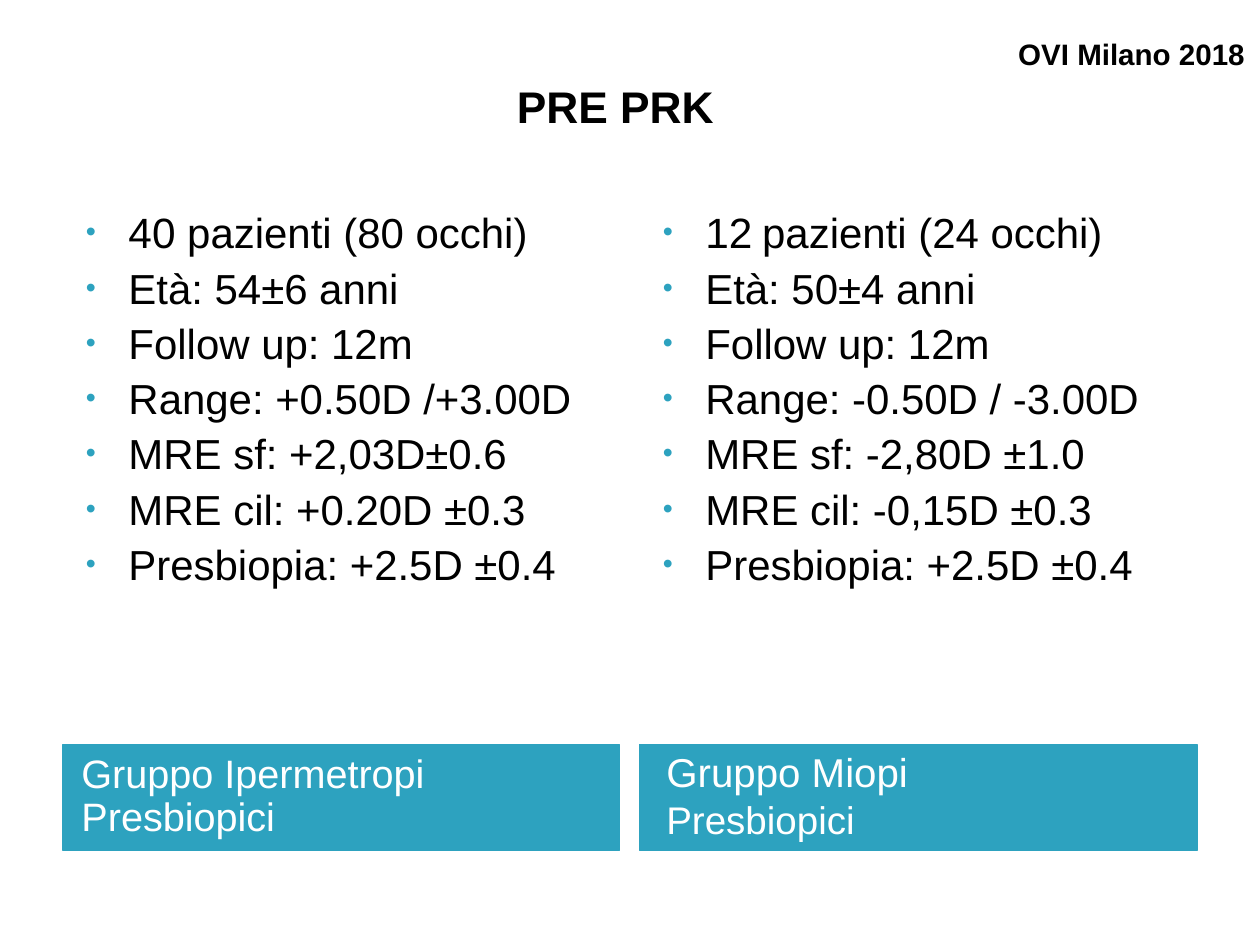
import pptx
import pptx.dml.color
import pptx.enum.shapes
import pptx.enum.text
import pptx.oxml
import pptx.oxml.ns
import pptx.util

PX = 9144  # EMU in one px, 100 px to the inch
FONT = "Arial"
COLORS = {"teal": "2DA2BF", "white": "FFFFFF", "black": "000000"}
ANCHOR = pptx.enum.text.MSO_ANCHOR
BULLET_SIZE = 34.1
COUNT_SIZE = 34.4

HYPEROPES = [
    [("40", COUNT_SIZE), (" pazienti (80 occhi)", BULLET_SIZE)],
    [("Età: 54±6 anni", BULLET_SIZE)],
    [("Follow up: 12m", BULLET_SIZE)],
    [("Range: +0.50D /+3.00D", BULLET_SIZE)],
    [("MRE sf: +2,03D±0.6", BULLET_SIZE)],
    [("MRE cil: +0.20D ±0.3", BULLET_SIZE)],
    [("Presbiopia: +2.5D ±0.4", BULLET_SIZE)],
]
MYOPES = [
    [("12", COUNT_SIZE), (" ", 28.4), ("pazienti (24 occhi)", BULLET_SIZE)],
    [("Età: 50±4 anni", BULLET_SIZE)],
    [("Follow up: 12m", BULLET_SIZE)],
    [("Range: -0.50D / -3.00D", BULLET_SIZE)],
    [("MRE sf: -2,80D ±1.0", BULLET_SIZE)],
    [("MRE cil: -0,15D ±0.3", BULLET_SIZE)],
    [("Presbiopia: +2.5D ±0.4", BULLET_SIZE)],
]


def px(*lengths):
    return [length * PX for length in lengths]


def color(name):
    return pptx.dml.color.RGBColor.from_string(COLORS[name])


def set_frame(frame, insets, anchor, wrap=True):
    (frame.margin_left, frame.margin_top,
     frame.margin_right, frame.margin_bottom) = px(*insets)
    frame.vertical_anchor = anchor
    frame.word_wrap = wrap


def write_lines(frame, lines, ink, bold=False):
    """Write one paragraph per line; a line is a list of (text, size)."""
    for index, line in enumerate(lines):
        para = frame.add_paragraph() if index else frame.paragraphs[0]
        para.alignment = pptx.enum.text.PP_ALIGN.LEFT
        for text, size in line:
            span = para.add_run()
            span.text = text
            span.font.name = FONT
            span.font.size = pptx.util.Pt(size)
            span.font.bold = bold
            span.font.color.rgb = color(ink)


def add_bullet(para):
    props = para._p.get_or_add_pPr()
    props.set("marL", str(60 * PX))
    props.set("indent", str(-48 * PX))
    space = pptx.oxml.ns.nsdecls("a")
    for xml in (
        f'<a:buClr {space}><a:srgbClr val="{COLORS["teal"]}"/></a:buClr>',
        f'<a:buSzPct {space} val="68000"/>',
        f'<a:buFont {space} typeface="{FONT}"/>',
        f'<a:buChar {space} char="•"/>',
    ):
        props.append(pptx.oxml.parse_xml(xml))


def heading(page, box, text, size):
    frame = page.shapes.add_textbox(*px(*box)).text_frame
    set_frame(frame, (0, 0, 0, 0), ANCHOR.MIDDLE, wrap=False)
    write_lines(frame, [[(text, size)]], "black", bold=True)
    frame.paragraphs[0].alignment = pptx.enum.text.PP_ALIGN.CENTER


def bullet_list(page, box, lines):
    frame = page.shapes.add_textbox(*px(*box)).text_frame
    set_frame(frame, (14, 8, 14, 8), ANCHOR.TOP)
    write_lines(frame, lines, "black")
    for para in frame.paragraphs:
        para.space_before = pptx.util.Pt(4)
        add_bullet(para)


def group_label(page, box, lines, insets, gap):
    label = page.shapes.add_shape(
        pptx.enum.shapes.MSO_SHAPE.RECTANGLE, *px(*box))
    label.shadow.inherit = False
    label.fill.solid()
    label.fill.fore_color.rgb = color("teal")
    label.line.color.rgb = color("teal")
    label.line.width = pptx.util.Pt(1.08)
    set_frame(label.text_frame, insets, ANCHOR.MIDDLE)
    write_lines(label.text_frame, lines, "white")
    for para in label.text_frame.paragraphs:
        para.line_spacing = 0.9
        para.space_before = pptx.util.Pt(gap)


def group_column(page, box, bullets, label, insets, gap):
    """Bullets from the top of the box, coloured label along its bottom."""
    left, top, width, height = box
    label_height = 119
    bullet_list(page, (left, top, width, 452), bullets)
    group_label(page, (left, top + height - label_height, width, label_height),
                label, insets, gap)


def main():
    deck = pptx.Presentation()
    deck.slide_width, deck.slide_height = px(1422, 1067)
    page = deck.slides.add_slide(deck.slide_layouts[6])

    # Event name and title
    heading(page, (1137, 40, 280, 42), "OVI Milano 2018", 24)
    heading(page, (577, 84, 235, 71), "PRE PRK", 36)

    # The two patient groups
    group_column(page, (71, 225, 628, 735), HYPEROPES,
                 [[("Gruppo Ipermetropi Presbiopici", 32.2)]],
                 (21, 6, 10, 6), 3)
    group_column(page, (722, 225, 629, 735), MYOPES,
                 [[("Gruppo Miopi", 32.7)], [("Presbiopici", 31.3)]],
                 (30, 8, 14, 8), 4)

    deck.save("out.pptx")


if __name__ == "__main__":
    main()
